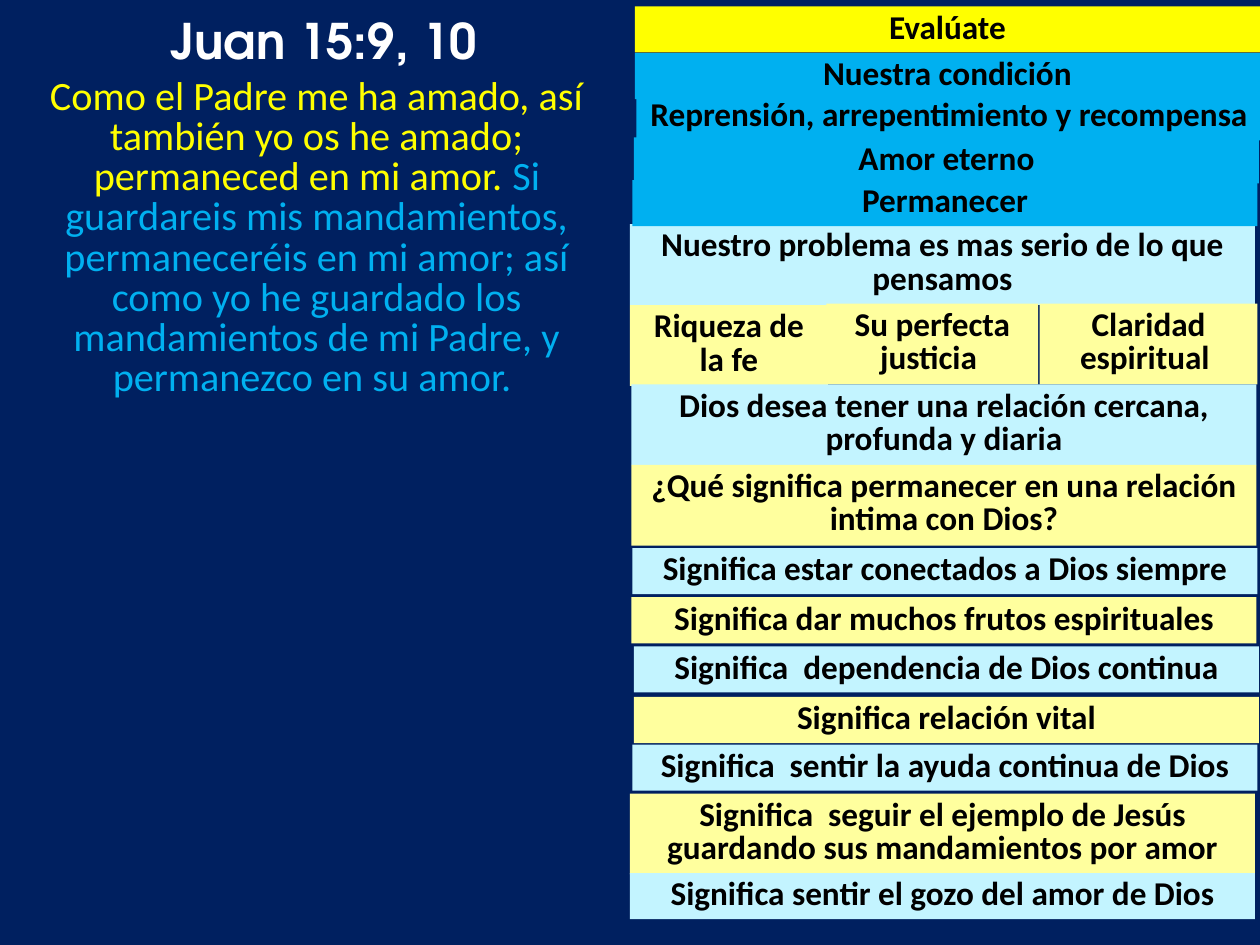
import pptx
import pptx.util
from pptx.dml.color import RGBColor
from pptx.enum.shapes import MSO_SHAPE
from pptx.enum.text import MSO_ANCHOR, MSO_AUTO_SIZE, PP_ALIGN
from pptx.util import Cm

NAVY, WHITE, BLACK = "002060", "FFFFFF", "000000"
YELLOW, BLUE = "FFFF00", "00B0F0"
PALE_BLUE, PALE_YELLOW = "C3F4FF", "FFFF9E"
COLUMN_WIDTH = 12.6
ONE_LINE, TWO_LINES = 0.93, 1.63


def color(hex_string):
    return RGBColor.from_string(hex_string)


class OutlineSlide:
    body_font = "Calibri"
    title_font = "TeX Gyre Adventor"

    def __init__(self, prs):
        self.slide = prs.slides.add_slide(prs.slide_layouts[5])
        background = self.slide.background.fill
        background.solid()
        background.fore_color.rgb = color(NAVY)

    def format_text(self, frame, font_name, size, bold, spacing=None):
        frame.word_wrap = True
        frame.auto_size = MSO_AUTO_SIZE.SHAPE_TO_FIT_TEXT
        frame.vertical_anchor = MSO_ANCHOR.TOP
        paragraph = frame.paragraphs[0]
        paragraph.alignment = PP_ALIGN.CENTER
        if spacing:
            paragraph.line_spacing = pptx.util.Pt(spacing)
        paragraph.font.name = font_name
        paragraph.font.size = pptx.util.Pt(size)
        paragraph.font.bold = bold
        return paragraph

    def title(self, text, left, top, width, height):
        heading = self.slide.shapes.title
        heading.left, heading.top = Cm(left), Cm(top)
        heading.width, heading.height = Cm(width), Cm(height)
        heading.text_frame.text = text
        paragraph = self.format_text(heading.text_frame, self.title_font, 28, True)
        paragraph.font.color.rgb = color(WHITE)

    def verse(self, parts, left, top, width, height):
        box = self.slide.shapes.add_textbox(Cm(left), Cm(top), Cm(width), Cm(height))
        paragraph = self.format_text(box.text_frame, self.body_font, 23, False, 23)
        for text, text_color in parts:
            run = paragraph.add_run()
            run.text = text
            run.font.color.rgb = color(text_color)

    def band(self, text, fill, left, top, height=ONE_LINE, width=COLUMN_WIDTH):
        bar = self.slide.shapes.add_shape(
            MSO_SHAPE.RECTANGLE, Cm(left), Cm(top), Cm(width), Cm(height))
        bar.shadow.inherit = False
        bar.fill.solid()
        bar.fill.fore_color.rgb = color(fill)
        bar.line.fill.background()
        bar.text_frame.text = text
        paragraph = self.format_text(bar.text_frame, self.body_font, 19, True, 19)
        paragraph.font.color.rgb = color(BLACK)


# Outline bands, back to front: text, fill, left, top, height, width
OUTLINE = [
    ("Evalúate", YELLOW, 12.8, 0.13),
    ("Nuestra condición", BLUE, 12.8, 1.07),
    ("Nuestro problema es mas serio de lo que pensamos",
     PALE_BLUE, 12.7, 4.52, TWO_LINES),
    ("Riqueza de la fe", PALE_YELLOW, 12.7, 6.15, TWO_LINES, 3.99),
    ("Su perfecta justicia ", PALE_YELLOW, 16.66, 6.12, TWO_LINES, 4.27),
    ("Claridad espiritual ", PALE_YELLOW, 20.96, 6.12, TWO_LINES, 4.39),
    ("Reprensión, arrepentimiento y recompensa", BLUE, 12.83, 1.9),
    ("Amor eterno", BLUE, 12.78, 2.77),
    ("Dios desea tener una relación cercana, profunda y diaria",
     PALE_BLUE, 12.73, 7.75, TWO_LINES),
    ("Permanecer", BLUE, 12.75, 3.63),
    ("¿Qué significa permanecer en una relación intima con Dios?",
     PALE_YELLOW, 12.73, 9.37, TWO_LINES),
    ("Significa estar conectados a Dios siempre", PALE_BLUE, 12.75, 11.05),
    ("Significa dar muchos frutos espirituales", PALE_YELLOW, 12.73, 12.04),
    ("Significa  dependencia de Dios continua", PALE_BLUE, 12.78, 13.03),
    ("Significa relación vital", PALE_YELLOW, 12.78, 14.05),
    ("Significa  sentir la ayuda continua de Dios", PALE_BLUE, 12.75, 15.01),
    ("Significa  seguir el ejemplo de Jesús guardando sus mandamientos por amor",
     PALE_YELLOW, 12.7, 16, TWO_LINES),
    ("Significa sentir el gozo del amor de Dios", PALE_BLUE, 12.7, 17.6),
]

VERSE = [
    ("Como el Padre me ha amado, así también yo os he amado; "
     "permaneced en mi amor. ", YELLOW),
    ("Si guardareis mis mandamientos, permaneceréis en mi amor; así como yo "
     "he guardado los mandamientos de mi Padre, y permanezco en su amor. ", BLUE),
]


def main():
    prs = pptx.Presentation()
    prs.slide_width, prs.slide_height = Cm(25.4), Cm(19.05)
    page = OutlineSlide(prs)

    # Bible passage on the left
    page.title("Juan 15:9, 10", 0.63, 0.08, 11.81, 1.45)
    page.verse(VERSE, 0.08, 1.45, 12.62, 6.83)

    # Sermon outline on the right
    for entry in OUTLINE:
        page.band(*entry)

    prs.save("out.pptx")


if __name__ == "__main__":
    main()
